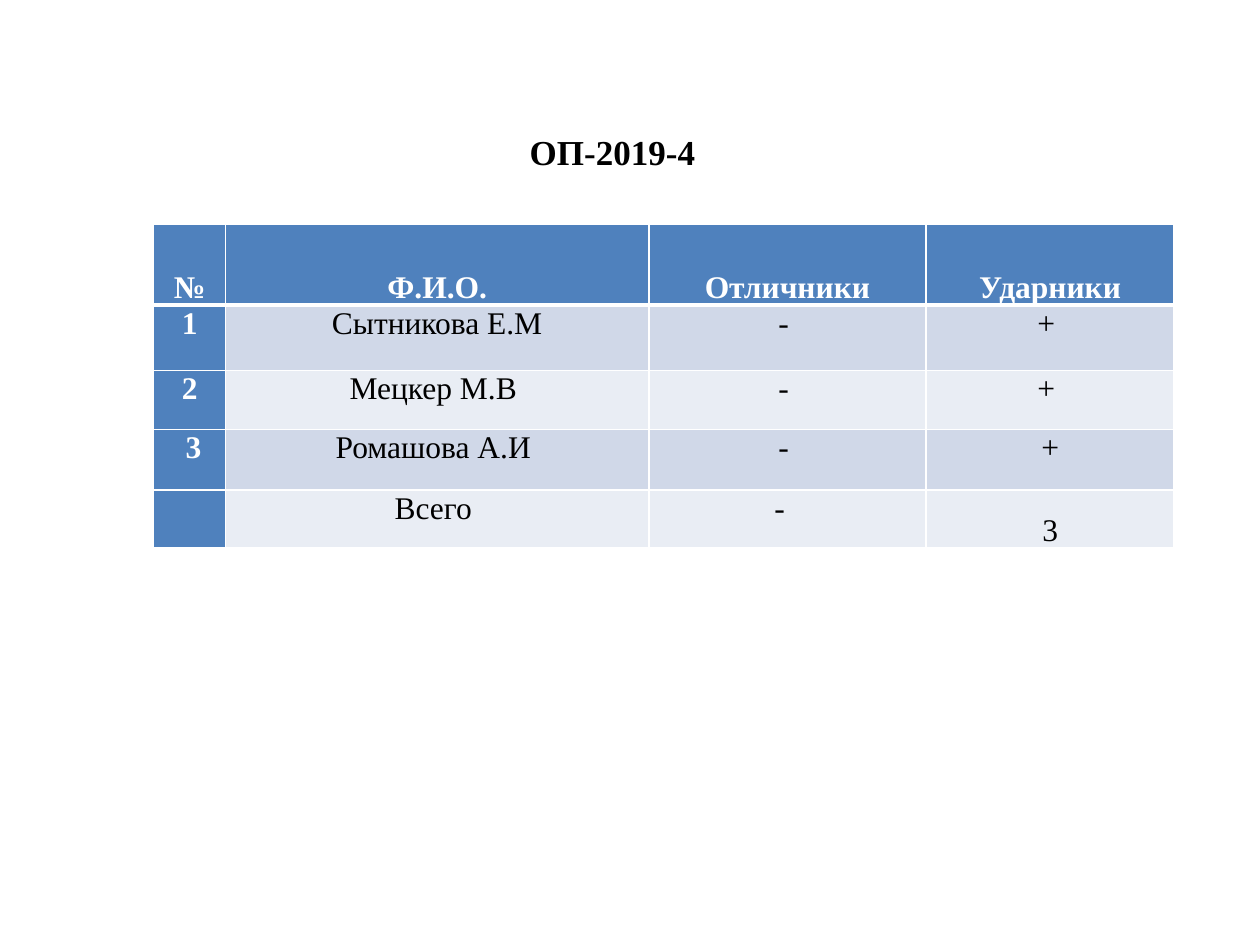
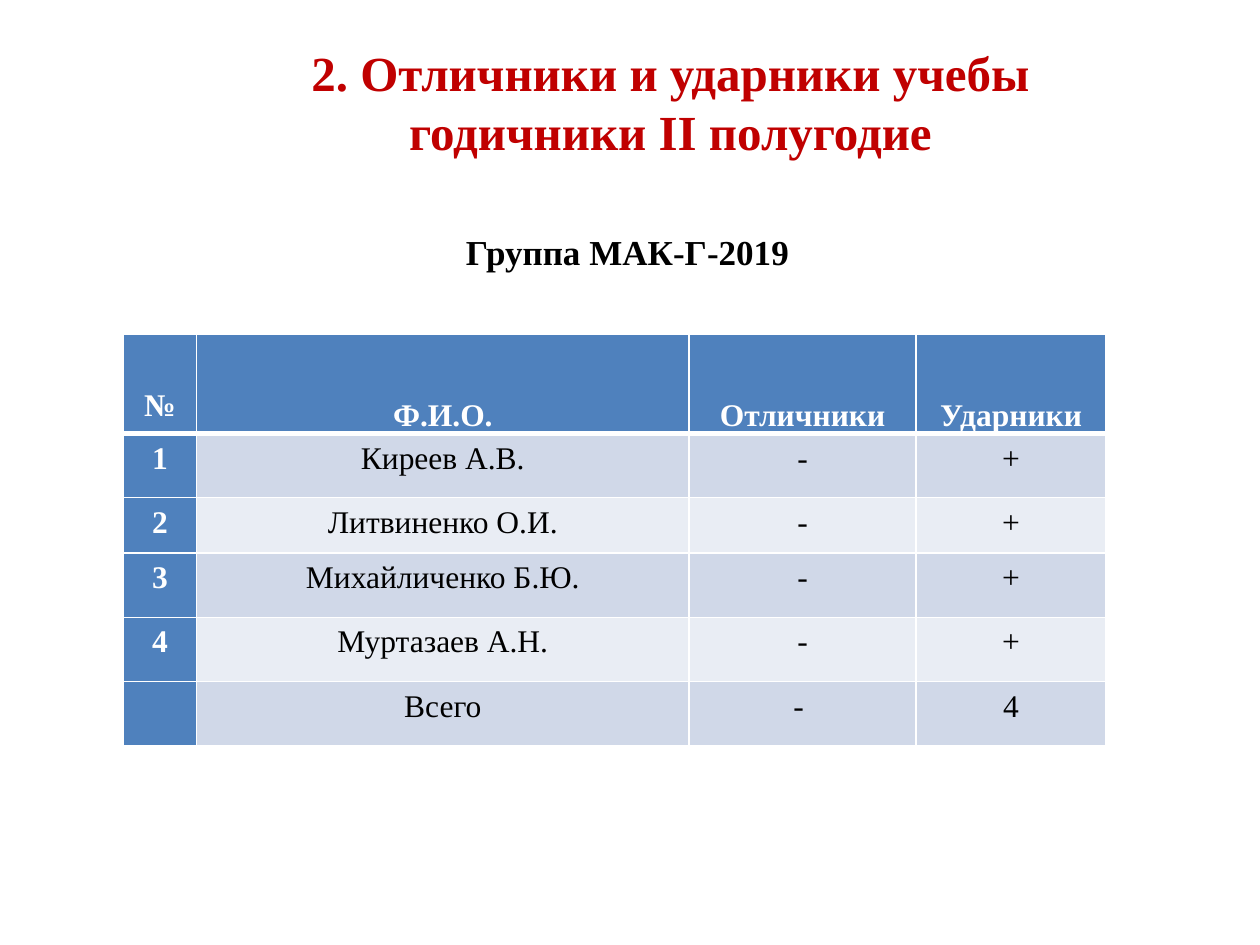
from lxml.etree import SubElement as Sub
from pptx import Presentation
from pptx.dml.color import RGBColor as Rgb
from pptx.enum.text import MSO_ANCHOR as Anchor, PP_ALIGN as Align
from pptx.oxml.ns import qn
from pptx.util import Inches, Pt

HUES = {
    "ink": "000000",
    "white": "FFFFFF",
    "red": "C00000",
    "head": "4F81BD",
    "odd": "D0D8E8",
    "even": "E9EDF4",
}
HEADS = ["№", "Ф.И.О.", "Отличники", "Ударники"]


class Deck:
    font = "Times New Roman"
    cols, rows = 100, 75

    def __init__(self):
        self.prs = Presentation()
        self.prs.slide_width = Inches(10)
        self.prs.slide_height = Inches(7.5)
        self.slide = None

    def page(self):
        self.slide = self.prs.slides.add_slide(self.prs.slide_layouts[6])

    def wide(self, cols):
        return round(self.prs.slide_width * cols / self.cols)

    def high(self, rows):
        return round(self.prs.slide_height * rows / self.rows)

    def area(self, x, y, w, h):
        return self.wide(x), self.high(y), self.wide(w), self.high(h)

    def label(self, para, text, size, hue, bold, gap=None):
        para.alignment = Align.CENTER
        para.line_spacing = gap
        if text:
            run = para.add_run()
            run.text = text
            font = run.font
            font.name, font.size, font.bold = self.font, Pt(size), bold
            font.color.rgb = Rgb.from_string(HUES[hue])

    def title(self, area, lines, size=20, hue="ink", anchor=Anchor.MIDDLE):
        frame = self.slide.shapes.add_textbox(*self.area(*area)).text_frame
        frame.word_wrap = True
        frame.vertical_anchor = anchor
        for i, line in enumerate(lines):
            para = frame.add_paragraph() if i else frame.paragraphs[0]
            self.label(para, line, size, hue, True)

    def edge(self, cell, base):
        props = cell._tc.get_or_add_tcPr()
        for side in "LRTB":
            width = Pt(base if side == "B" else 1)
            line = Sub(props, qn(f"a:ln{side}"), w=str(width))
            fill = Sub(line, qn("a:solidFill"))
            Sub(fill, qn("a:srgbClr"), val=HUES["white"])

    def pad(self, cell, side, top, base=0):
        cell.margin_left = cell.margin_right = Inches(side)
        cell.margin_top, cell.margin_bottom = Inches(top), Inches(base)

    def table(self, spot, widths, heights, data, side, top, gap=None, lift=0):
        size = sum(widths), sum(heights)
        frame = self.slide.shapes.add_table(
            len(heights), len(widths), *self.area(*spot, *size))
        grid = frame.table
        grid.first_col = True
        for col, width in zip(grid.columns, widths):
            col.width = self.wide(width)
        for row, height in zip(grid.rows, heights):
            row.height = self.high(height)
        for r, texts in enumerate([HEADS] + data):
            for c, text in enumerate(texts):
                cell = grid.cell(r, c)
                lead = r == 0 or c == 0
                self.edge(cell, 1 if r else 3)
                cell.fill.solid()
                band = "head" if lead else "odd" if r % 2 else "even"
                cell.fill.fore_color.rgb = Rgb.from_string(HUES[band])
                if r:
                    self.pad(cell, side, top)
                else:
                    self.pad(cell, 0.07, 0, 0 if c else lift)
                    cell.vertical_anchor = Anchor.BOTTOM
                self.label(cell.text_frame.paragraphs[0], text, 18,
                           "white" if lead else "ink", lead,
                           gap if r else 1.15)
        return grid


def main():
    deck = Deck()

    deck.page()
    deck.title((5.5, 7.1, 86.2, 9.9), ["ОП-2019-4"])
    grid = deck.table(
        (12.2, 17.8), [5.7, 33.6, 22, 19.7], [6.4, 5.2, 4.7, 4.8, 4.6],
        [["1", "Сытникова Е.М", "- ", "+ "],
         ["2", "Мецкер М.В ", "- ", "+ "],
         [" 3", "Ромашова А.И ", "- ", "+"],
         ["", "Всего ", "-  ", "3"]],
        side=0.01, top=0.01)
    grid.cell(4, 3).vertical_anchor = Anchor.BOTTOM

    deck.page()
    deck.title((6.7, 15.5, 86.2, 9), ["Группа МАК-Г-2019"])
    names = ["Киреев А.В.", "Литвиненко О.И.", "Михайличенко Б.Ю.",
             "Муртазаев А.Н."]
    data = [[str(i), name, "-", "+"] for i, name in enumerate(names, 1)]
    deck.table(
        (9.8, 26.5), [5.8, 39.1, 18, 15.1], [7.9, 5.1, 4.4, 5.1, 5.1, 5.1],
        data + [["", "Всего", "- ", str(len(names))]],
        side=0.07, top=0.17, gap=Pt(12), lift=0.08)
    deck.title((19.3, 2.9, 67.8, 10.4),
               ["2. Отличники и ударники учебы", "годичники II полугодие"],
               28, "red", Anchor.TOP)

    deck.prs.save("out.pptx")


if __name__ == "__main__":
    main()
